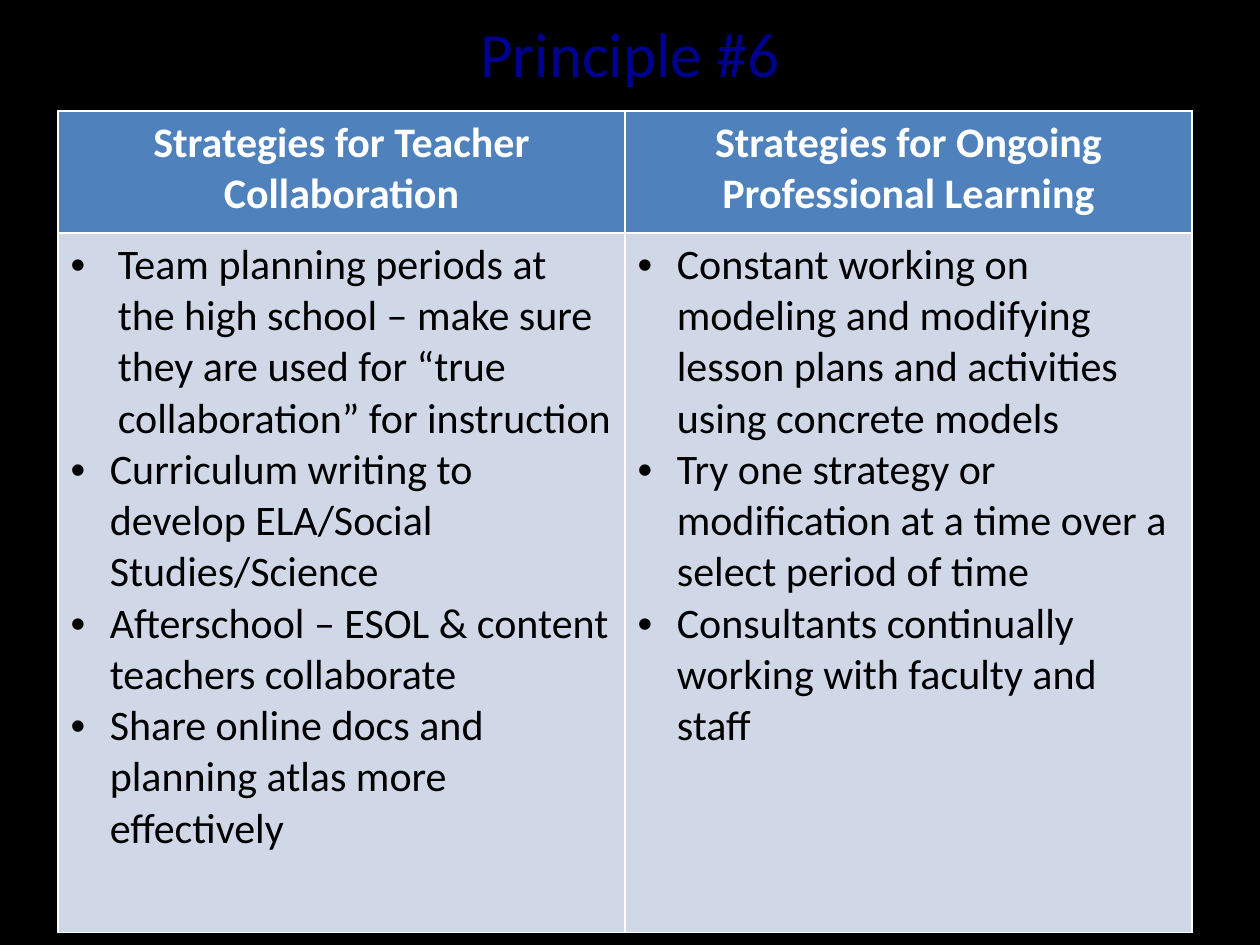
from lxml import etree
from pptx import Presentation
from pptx.dml.color import RGBColor
from pptx.enum.text import MSO_ANCHOR, PP_ALIGN
from pptx.oxml.ns import qn
from pptx.util import Cm, Pt

CENTER, LEFT = PP_ALIGN.CENTER, PP_ALIGN.LEFT
MIDDLE = MSO_ANCHOR.MIDDLE

TITLE = "Principle #6"
WIDE, NORMAL = 0.95, 0.79
COLUMNS = [
    ("Strategies for Teacher Collaboration", [
        ("Team planning periods at the high school – make sure they are used "
         "for “true collaboration” for instruction", WIDE),
        ("Curriculum writing to develop ELA/Social Studies/Science", NORMAL),
        ("Afterschool – ESOL & content teachers collaborate", NORMAL),
        ("Share online docs and planning atlas more effectively", NORMAL),
    ]),
    ("Strategies for Ongoing Professional Learning", [
        ("Constant working on modeling and modifying lesson plans and "
         "activities using concrete models", NORMAL),
        ("Try one strategy or modification at a time over a select period of time",
         NORMAL),
        ("Consultants continually working with faculty and staff", NORMAL),
    ]),
]
ROW_HEIGHTS = [2.46, 14.1]
COL_WIDTH = 11.43
TITLE_FORMAT = {"name": "Calibri", "size": Pt(36), "bold": False}
HEAD_FORMAT = {"name": "Calibri", "size": Pt(24), "bold": True}
BODY_FORMAT = {"name": "Calibri", "size": Pt(24), "bold": False}


def paint(fill, color):
    fill.solid()
    fill.fore_color.rgb = RGBColor.from_string(color)


def write(p, text, fmt, color, align):
    p.alignment = align
    r = p.add_run()
    r.text = text
    for key, value in fmt.items():
        setattr(r.font, key, value)
    paint(r.font.fill, color)


def add_bullet(p, indent):
    pPr = p._p.get_or_add_pPr()
    pPr.set("marL", str(Cm(indent)))
    pPr.set("indent", str(-Cm(indent)))
    etree.SubElement(pPr, qn("a:buFont")).set("typeface", "Arial")
    etree.SubElement(pPr, qn("a:buChar")).set("char", "•")


prs = Presentation()
prs.slide_width, prs.slide_height = Cm(25.4), Cm(19.05)
s = prs.slides.add_slide(prs.slide_layouts[5])
paint(s.background.fill, "000000")

title = s.shapes.title
title.left, title.top, title.width, title.height = Cm(1.27), Cm(0.18), Cm(22.86), Cm(1.75)
title.text_frame.vertical_anchor = MIDDLE
write(title.text_frame.paragraphs[0], TITLE, TITLE_FORMAT, "000090", CENTER)

table = s.shapes.add_table(len(ROW_HEIGHTS), len(COLUMNS), Cm(1.17), Cm(2.24),
                           Cm(COL_WIDTH * len(COLUMNS)), Cm(sum(ROW_HEIGHTS))).table
for row, height in zip(table.rows, ROW_HEIGHTS):
    row.height = Cm(height)
for i, (heading, items) in enumerate(COLUMNS):
    table.columns[i].width = Cm(COL_WIDTH)
    head, body = table.cell(0, i), table.cell(1, i)
    paint(head.fill, "4F81BD")
    paint(body.fill, "D0D8E8")
    write(head.text_frame.paragraphs[0], heading, HEAD_FORMAT, "FFFFFF", CENTER)
    tf = body.text_frame
    for n, (text, indent) in enumerate(items):
        p = tf.add_paragraph() if n else tf.paragraphs[0]
        add_bullet(p, indent)
        write(p, text, BODY_FORMAT, "000000", LEFT)

prs.save("out.pptx")
